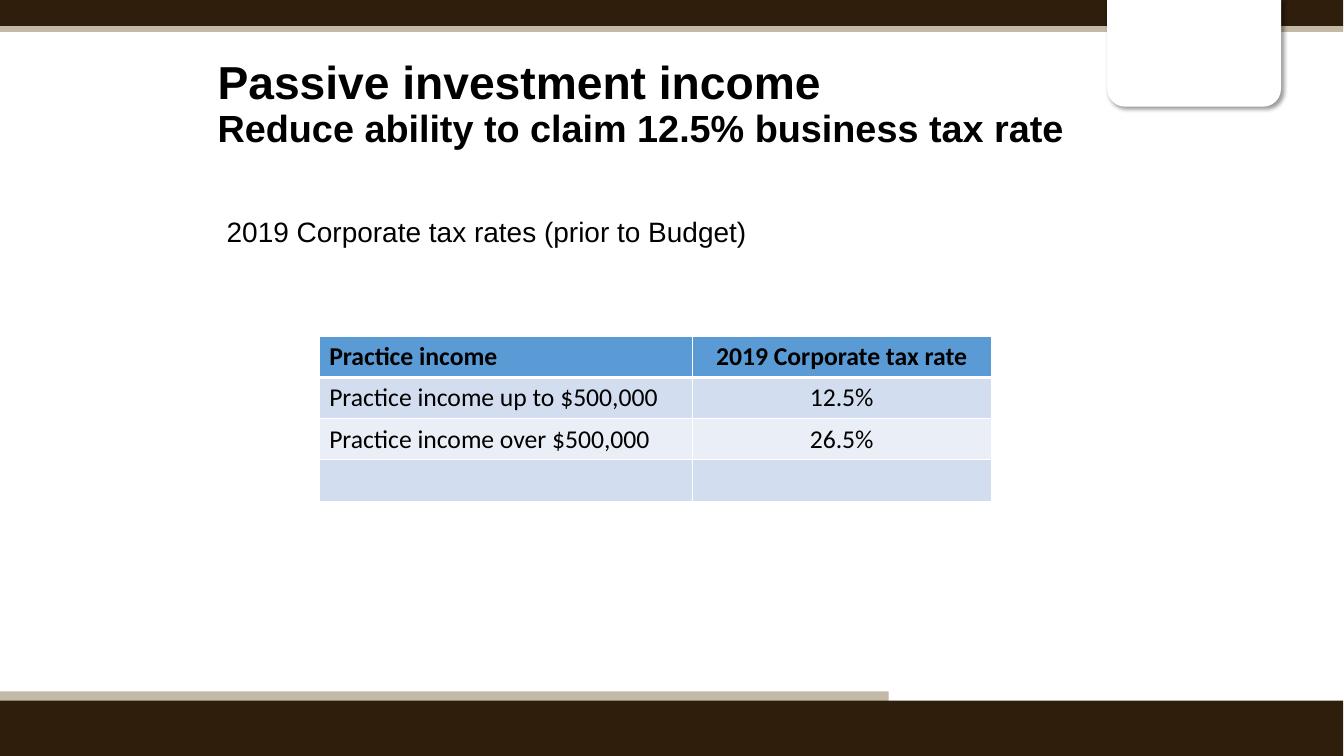
"""Builds the slide on passive investment income and corporate tax rates."""
from dataclasses import dataclass

from lxml.etree import SubElement
from pptx import Presentation
from pptx.dml.color import RGBColor
from pptx.enum.shapes import MSO_SHAPE as Shape
from pptx.enum.text import MSO_ANCHOR as Anchor, MSO_AUTO_SIZE as AutoSize, PP_ALIGN as Align
from pptx.oxml.ns import qn
from pptx.util import Inches, Pt


@dataclass(frozen=True)
class Theme:
    brown: str = "2F1E0C"
    tan: str = "C2B9A6"
    white: str = "FFFFFF"
    black: str = "000000"
    header: str = "5B9BD5"
    bands: tuple = ("D2DEEF", "EAEFF7")
    heading_font: str = "Arial"
    table_font: str = "Calibri"
    title_size: float = 39.6
    subtitle_size: float = 32.4
    body_size: float = 24
    table_size: float = 22


def write(paragraph, text, *, size, font, color, bold=False, align=Align.LEFT, spacing=None):
    paragraph.alignment = align
    paragraph.space_before = Pt(0)
    paragraph.line_spacing = spacing
    run = paragraph.add_run()
    run.text = text
    run.font.size = Pt(size)
    run.font.name = font
    run.font.bold = bold
    run.font.color.rgb = RGBColor.from_string(color)


class SlideBuilder:
    def __init__(self, slide, theme):
        self.slide = slide
        self.theme = theme

    def shape(self, kind, left, top, width, height, color):
        shape = self.slide.shapes.add_shape(
            kind, Inches(left), Inches(top), Inches(width), Inches(height))
        shape.shadow.inherit = False
        shape.fill.solid()
        shape.fill.fore_color.rgb = RGBColor.from_string(color)
        shape.line.fill.background()
        return shape

    def tab(self, left, top, width, height):
        shape = self.shape(Shape.ROUND_2_SAME_RECTANGLE, left, top, width, height,
                           self.theme.white)
        shape.rotation = 180
        effects = shape._element.spPr.find(qn("a:effectLst"))
        shadow = SubElement(effects, qn("a:outerShdw"), blurRad=str(Pt(4)),
                            dist=str(Pt(3)), dir="2700000", algn="tl", rotWithShape="0")
        color = SubElement(shadow, qn("a:srgbClr"), val=self.theme.black)
        SubElement(color, qn("a:alpha"), val="40000")

    def title(self, left, top, width, height, lines):
        title = self.slide.shapes.title
        title.left, title.top = Inches(left), Inches(top)
        title.width, title.height = Inches(width), Inches(height)
        self.fill_frame(title.text_frame, lines, bold=True)

    def text(self, left, top, width, height, lines):
        box = self.slide.shapes.add_textbox(
            Inches(left), Inches(top), Inches(width), Inches(height))
        self.fill_frame(box.text_frame, lines)

    def fill_frame(self, frame, lines, bold=False):
        frame.word_wrap = True
        frame.auto_size = AutoSize.NONE
        frame.vertical_anchor = Anchor.TOP
        for index, (text, size) in enumerate(lines):
            paragraph = frame.add_paragraph() if index else frame.paragraphs[0]
            write(paragraph, text, size=size, font=self.theme.heading_font,
                  color=self.theme.black, bold=bold, spacing=0.9)

    def table(self, left, top, widths, row_height, rows):
        table = self.slide.shapes.add_table(
            len(rows), len(widths), Inches(left), Inches(top),
            Inches(sum(widths)), Inches(row_height * len(rows))).table
        for column, width in zip(table.columns, widths):
            column.width = Inches(width)
        for row_index, values in enumerate(rows):
            table.rows[row_index].height = Inches(row_height)
            for column_index, text in enumerate(values):
                self.cell(table.cell(row_index, column_index), text, row_index,
                          Align.CENTER if column_index else Align.LEFT)

    def cell(self, cell, text, row_index, align):
        theme = self.theme
        is_header = row_index == 0
        cell.margin_left = cell.margin_right = Inches(0.12)
        cell.margin_top = cell.margin_bottom = Inches(0.06)
        self.border(cell, top=3 if row_index == 1 else 1, bottom=3 if is_header else 1)
        cell.fill.solid()
        cell.fill.fore_color.rgb = RGBColor.from_string(
            theme.header if is_header else theme.bands[(row_index - 1) % 2])
        if text:
            write(cell.text_frame.paragraphs[0], text, size=theme.table_size,
                  font=theme.table_font, color=theme.black, bold=is_header, align=align)

    def border(self, cell, top, bottom):
        properties = cell._tc.get_or_add_tcPr()
        for side, width in (("L", 1), ("R", 1), ("T", top), ("B", bottom)):
            line = SubElement(properties, qn(f"a:ln{side}"), w=str(Pt(width)))
            fill = SubElement(line, qn("a:solidFill"))
            SubElement(fill, qn("a:srgbClr"), val=self.theme.white)


def main():
    theme = Theme()
    presentation = Presentation()
    presentation.slide_width, presentation.slide_height = Inches(16), Inches(9)
    slide = presentation.slides.add_slide(presentation.slide_layouts[5])
    builder = SlideBuilder(slide, theme)

    for top, width, height, color in (
            (0.3, 16, 0.08, theme.tan), (0, 16, 0.31, theme.brown),
            (8.23, 10.59, 0.17, theme.tan), (8.34, 16, 0.67, theme.brown)):
        builder.shape(Shape.RECTANGLE, -0.01, top, width, height, color)
    builder.tab(13.18, -0.01, 2.07, 1.28)

    builder.title(2.49, 0.66, 10.52, 1.25, [
        ("Passive investment income", theme.title_size),
        ("Reduce ability to claim 12.5% business tax rate", theme.subtitle_size)])
    builder.text(2.6, 2.55, 10.8, 0.6, [
        ("2019 Corporate tax rates (prior to Budget)", theme.body_size)])
    builder.table(3.8, 4, (4.44, 3.56), 0.49, [
        ("Practice income", "2019 Corporate tax rate"),
        ("Practice income up to $500,000", "12.5%"),
        ("Practice income over $500,000", "26.5%"),
        ("", "")])
    presentation.save("out.pptx")


if __name__ == "__main__":
    main()
